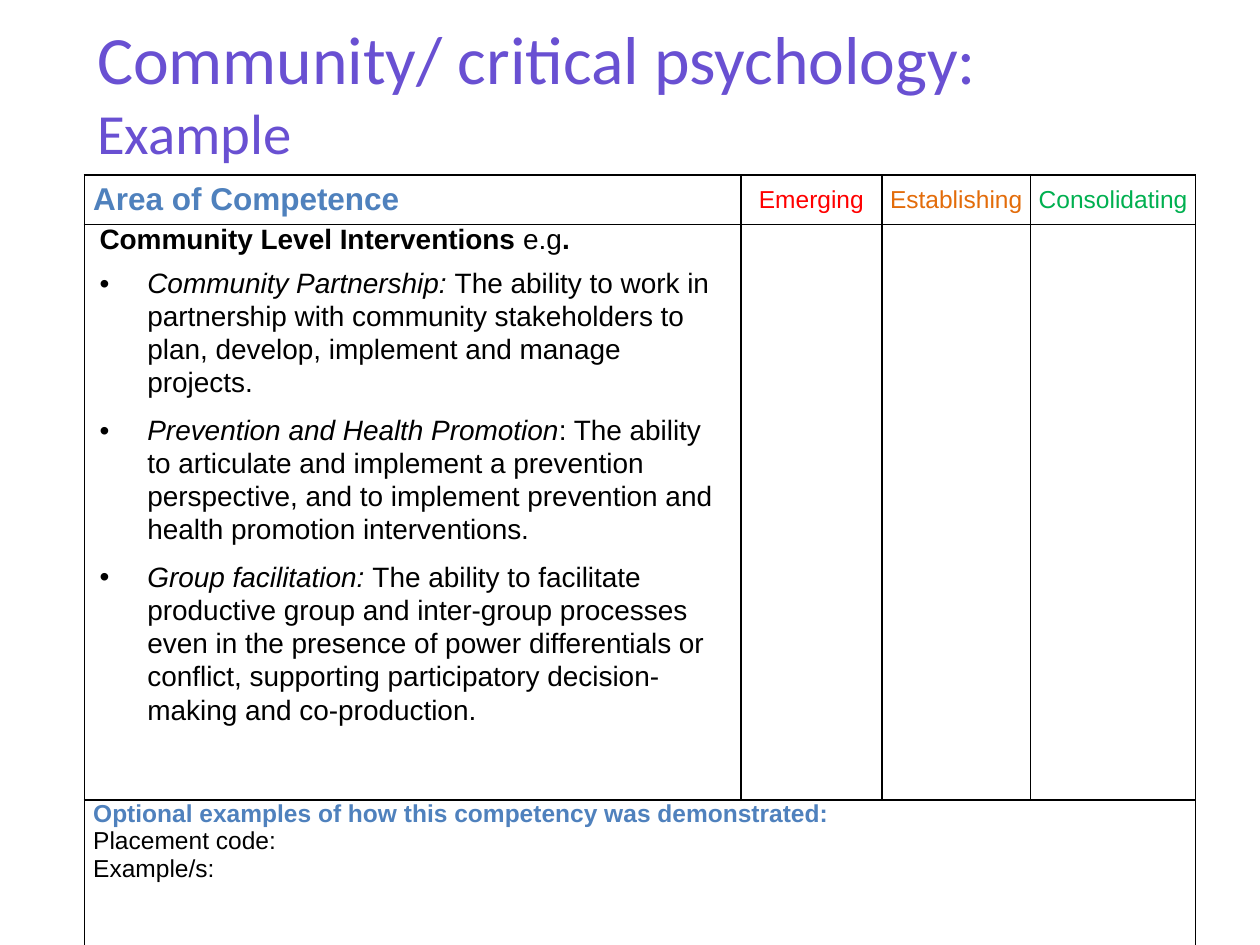
"""Build the community psychology competence slide."""
from lxml import etree
from pptx import Presentation, util as u
from pptx.dml.color import RGBColor
from pptx.enum import text
from pptx.oxml import ns

COLORS = {"purple": "6950D2", "blue": "4F81BD", "black": "000000",
          "red": "FF0000", "orange": "E36C0A", "green": "00B050"}
TITLE = [("Community/ critical psychology:", 38.7), ("Example", 32.4)]
AREA = "Area of Competence"
LEVELS = [("Emerging", "red"), ("Establishing", "orange"), ("Consolidating", "green")]
HEADING = [("Community Level Interventions ", True), ("e.g", False), (".", True)]
COMPETENCES = [
    ("Community Partnership: ",
     "The ability to work in partnership with community stakeholders to plan, "
     "develop, implement and manage projects."),
    ("Prevention and Health Promotion",
     ": The ability to articulate and implement a prevention perspective, and to "
     "implement prevention and health promotion interventions."),
    ("Group facilitation: ",
     "The ability to facilitate productive group and inter-group processes even in "
     "the presence of power differentials or conflict, supporting participatory "
     "decision-making and co-production."),
]
EXAMPLES_HEADING = "Optional examples of how this competency was demonstrated:"
EXAMPLE_FIELDS = ["Placement code:", "Example/s:"]
COLUMN_WIDTHS = [5.21, 1.12, 1.18, 1.31]
ROW_HEIGHTS = [0.39, 4.57, 1.52]
ROW_MARGINS = [0.07, 0.12, 0.07]
LEVEL_MARGIN = 0.03
LEFT, TITLE_TOP, TABLE_TOP = 0.67, 0.22, 1.39
CENTER, MIDDLE = text.PP_ALIGN.CENTER, text.MSO_ANCHOR.MIDDLE


def apply(target, **values):
    for attribute, value in values.items():
        setattr(target, attribute, value)


def add_run(paragraph, words, size, color="black", font="Arial", **style):
    run = paragraph.add_run()
    run.text = words
    apply(run.font, name=font, size=u.Pt(size), **{"bold": False, **style})
    run.font.color.rgb = RGBColor.from_string(COLORS[color])


def add_bullet(paragraph):
    properties = paragraph._p.get_or_add_pPr()
    indent = u.Inches(0.38)
    properties.set("marL", str(indent))
    properties.set("indent", str(-indent))
    etree.SubElement(properties, ns.qn("a:buFont"), typeface="Arial")
    etree.SubElement(properties, ns.qn("a:buChar"), char="•")


def format_cell(cell, margin):
    properties = cell._tc.get_or_add_tcPr()
    for side in "LRTB":
        border = etree.SubElement(properties, ns.qn(f"a:ln{side}"), w=str(u.Pt(1)))
        fill = etree.SubElement(border, ns.qn("a:solidFill"))
        etree.SubElement(fill, ns.qn("a:srgbClr"), val=COLORS["black"])
    cell.fill.background()
    apply(cell, margin_left=u.Inches(margin), margin_right=u.Inches(margin),
          margin_top=0, margin_bottom=0)


def add_title(slide):
    title = slide.shapes.title
    apply(title, left=u.Inches(LEFT), top=u.Inches(TITLE_TOP),
          width=u.Inches(8.74), height=u.Inches(1.01))
    apply(title.text_frame, auto_size=text.MSO_AUTO_SIZE.NONE, vertical_anchor=MIDDLE)
    paragraph = title.text_frame.paragraphs[0]
    paragraph.alignment = text.PP_ALIGN.LEFT
    for number, (words, size) in enumerate(TITLE):
        if number:
            paragraph.add_line_break()
        add_run(paragraph, words, size, "purple", "Calibri")


def add_grid(slide):
    grid = slide.shapes.add_table(
        len(ROW_HEIGHTS), len(COLUMN_WIDTHS), u.Inches(LEFT), u.Inches(TABLE_TOP),
        u.Inches(sum(COLUMN_WIDTHS)), u.Inches(sum(ROW_HEIGHTS))).table
    apply(grid, first_row=False, horz_banding=False)
    for column, width in zip(grid.columns, COLUMN_WIDTHS):
        column.width = u.Inches(width)
    for row, height, margin in zip(grid.rows, ROW_HEIGHTS, ROW_MARGINS):
        row.height = u.Inches(height)
        for cell in row.cells:
            format_cell(cell, margin)
    grid.cell(2, 0).merge(grid.cell(2, len(COLUMN_WIDTHS) - 1))
    return grid


def fill_header(grid):
    area = grid.cell(0, 0)
    area.vertical_anchor = MIDDLE
    add_run(area.text_frame.paragraphs[0], AREA, 18, "blue", bold=True)
    for column, (level, color) in enumerate(LEVELS, 1):
        cell = grid.cell(0, column)
        apply(cell, vertical_anchor=MIDDLE, margin_left=u.Inches(LEVEL_MARGIN),
              margin_right=u.Inches(LEVEL_MARGIN))
        paragraph = cell.text_frame.paragraphs[0]
        paragraph.alignment = CENTER
        add_run(paragraph, level, 14, color)


def fill_competences(frame):
    heading = frame.paragraphs[0]
    heading.space_after = u.Pt(6)
    for words, bold in HEADING:
        add_run(heading, words, 16, bold=bold)
    for name, description in COMPETENCES:
        paragraph = frame.add_paragraph()
        add_bullet(paragraph)
        apply(paragraph, line_spacing=1.07, space_after=u.Pt(8))
        add_run(paragraph, name, 16, italic=True)
        add_run(paragraph, description, 16)


def fill_examples(frame):
    add_run(frame.paragraphs[0], EXAMPLES_HEADING, 14, "blue", bold=True)
    for field in EXAMPLE_FIELDS:
        add_run(frame.add_paragraph(), field, 14)


def main():
    deck = Presentation()
    apply(deck, slide_width=u.Inches(10), slide_height=u.Inches(7.5))
    slide = deck.slides.add_slide(deck.slide_layouts.get_by_name("Title Only"))
    add_title(slide)
    grid = add_grid(slide)
    fill_header(grid)
    fill_competences(grid.cell(1, 0).text_frame)
    fill_examples(grid.cell(2, 0).text_frame)
    deck.save("out.pptx")


if __name__ == "__main__":
    main()
